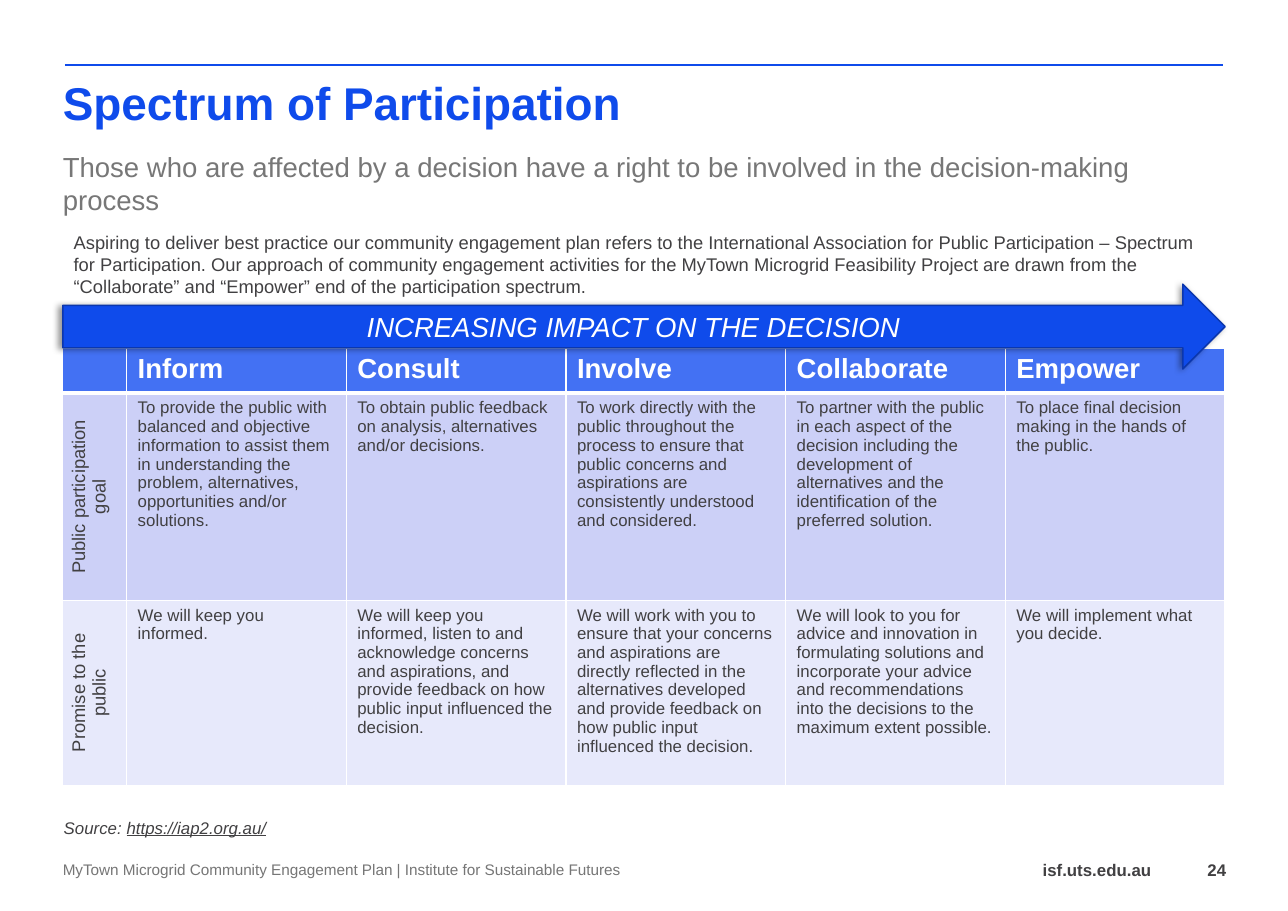
from dataclasses import dataclass

from lxml import etree
from pptx import Presentation
from pptx import util as u
from pptx.dml.color import RGBColor
from pptx.enum import shapes, text
from pptx.oxml import parse_xml
from pptx.oxml.ns import nsdecls, qn

LEFT, WIDTH = 0.57, 10.55
LABEL_WIDTH = 0.58
ROW_HEIGHTS = (0.41, 1.88, 1.68)
NO_INSET = (0, 0, 0, 0)
TEXT_INSET = (0.1, 0.05, 0.1, 0.05)

SPECTRUM = [
    ["", "Inform", "Consult", "Involve", "Collaborate", "Empower"],
    [
        "Public participation goal",
        "To provide the public with balanced and objective information to assist them in "
        "understanding the problem, alternatives, opportunities and/or solutions.",
        "To obtain public feedback on analysis, alternatives and/or decisions.",
        "To work directly with the public throughout the process to ensure that public "
        "concerns and aspirations are consistently understood and considered.",
        "To partner with the public in each aspect of the decision including the development "
        "of alternatives and the identification of the preferred solution.",
        "To place final decision making in the hands of the public.",
    ],
    [
        "Promise to the public",
        "We will keep you informed.",
        "We will keep you informed, listen to and acknowledge concerns and aspirations, and "
        "provide feedback on how public input influenced the decision.",
        "We will work with you to ensure that your concerns and aspirations are directly "
        "reflected in the alternatives developed and provide feedback on how public input "
        "influenced the decision.",
        "We will look to you for advice and innovation in formulating solutions and "
        "incorporate your advice and recommendations into the decisions to the maximum "
        "extent possible.",
        "We will implement what you decide.",
    ],
]


@dataclass(frozen=True)
class Theme:
    font: str = "Arial"
    blue: str = "0F4BEB"
    blue_edge: str = "0B37AE"
    ink: str = "414042"
    subtitle_grey: str = "777777"
    footer_grey: str = "767676"
    white: str = "FFFFFF"
    black: str = "000000"
    row_fills: tuple = ("4371F3", "CCD0F7", "E7E9FB")
    title: int = 30
    heading: int = 18
    intro: int = 12
    small: int = 11
    footer: int = 10


class SlideBuilder:
    def __init__(self, deck, theme):
        self.theme = theme
        self.page = deck.slides.add_slide(deck.slide_layouts[5])

    def add_text(self, frame, runs, size, color, align=text.PP_ALIGN.LEFT,
                 bold=False, italic=False):
        para = frame.paragraphs[0]
        para.alignment = align
        for words, underline in runs:
            span = para.add_run()
            span.text = words
            span.font.name = self.theme.font
            span.font.size = u.Pt(size)
            span.font.color.rgb = RGBColor.from_string(color)
            span.font.bold = bold
            span.font.italic = italic
            span.font.underline = underline
        return para

    def set_frame(self, frame, inset, anchor, wrap=True):
        frame.word_wrap = wrap
        frame.auto_size = text.MSO_AUTO_SIZE.NONE
        frame.vertical_anchor = anchor
        frame.margin_left, frame.margin_top, frame.margin_right, frame.margin_bottom = map(
            u.Inches, inset)

    def title(self, words, area):
        box = self.page.shapes.title
        box.left, box.top, box.width, box.height = map(u.Inches, area)
        self.set_frame(box.text_frame, NO_INSET, text.MSO_ANCHOR.TOP)
        para = self.add_text(box.text_frame, [(words, False)], self.theme.title,
                             self.theme.blue, bold=True)
        para.line_spacing = 0.9

    def textbox(self, runs, area, size, color, inset=TEXT_INSET,
                anchor=text.MSO_ANCHOR.TOP, wrap=True, **style):
        box = self.page.shapes.add_textbox(*map(u.Inches, area))
        self.set_frame(box.text_frame, inset, anchor, wrap)
        return self.add_text(box.text_frame, runs, size, color, **style)

    def rule(self, x1, x2, y):
        line = self.page.shapes.add_connector(
            shapes.MSO_CONNECTOR.STRAIGHT, *map(u.Inches, (x1, y, x2, y)))
        line.line.color.rgb = RGBColor.from_string(self.theme.blue)
        line.line.width = u.Pt(1.5)
        etree.SubElement(line._element.spPr, qn("a:effectLst"))

    def arrow(self, words, area):
        theme = self.theme
        arrow = self.page.shapes.add_shape(shapes.MSO_SHAPE.RIGHT_ARROW, *map(u.Inches, area))
        arrow.fill.solid()
        arrow.fill.fore_color.rgb = RGBColor.from_string(theme.blue)
        arrow.line.color.rgb = RGBColor.from_string(theme.blue_edge)
        arrow.line.width = u.Pt(1)
        arrow.shadow.inherit = False
        effects = arrow._element.spPr.find(qn("a:effectLst"))
        effects.append(parse_xml(
            f'<a:outerShdw {nsdecls("a")} blurRad="{u.Pt(4)}" dist="{u.Pt(3)}" '
            f'dir="10800000" rotWithShape="0"><a:srgbClr val="{theme.black}">'
            '<a:alpha val="40000"/></a:srgbClr></a:outerShdw>'))
        self.set_frame(arrow.text_frame, TEXT_INSET, text.MSO_ANCHOR.MIDDLE)
        self.add_text(arrow.text_frame, [(words, False)], theme.heading, theme.white,
                      text.PP_ALIGN.CENTER, italic=True)

    def borders(self, cell, top, bottom):
        props = cell._tc.get_or_add_tcPr()
        for side, width in (("L", 1), ("R", 1), ("T", top), ("B", bottom)):
            props.append(parse_xml(
                f'<a:ln{side} {nsdecls("a")} w="{u.Pt(width)}"><a:solidFill>'
                f'<a:srgbClr val="{self.theme.white}"/></a:solidFill></a:ln{side}>'))

    def table(self, rows, left, top, width, label_width, heights):
        theme = self.theme
        columns = len(rows[0])
        grid = self.page.shapes.add_table(
            len(rows), columns, *map(u.Inches, (left, top, width, sum(heights)))).table
        for index, column in enumerate(grid.columns):
            column.width = u.Inches(
                (width - label_width) / (columns - 1) if index else label_width)
        for r, words_in_row in enumerate(rows):
            grid.rows[r].height = u.Inches(heights[r])
            for c, words in enumerate(words_in_row):
                cell = grid.cell(r, c)
                self.borders(cell, top=3 if r == 1 else 1, bottom=1 if r else 3)
                cell.fill.solid()
                cell.fill.fore_color.rgb = RGBColor.from_string(theme.row_fills[r])
                if not words:
                    continue
                runs = [(words, False)]
                if r == 0:
                    self.add_text(cell.text_frame, runs, theme.heading, theme.white, bold=True)
                elif c == 0:
                    cell._tc.tcPr.set("vert", "vert270")
                    self.add_text(cell.text_frame, runs, theme.intro, theme.ink,
                                  text.PP_ALIGN.CENTER)
                else:
                    self.add_text(cell.text_frame, runs, theme.small, theme.ink)


def main():
    deck = Presentation()
    deck.slide_width, deck.slide_height = u.Inches(11.69), u.Inches(8.27)
    theme = Theme()
    slide = SlideBuilder(deck, theme)
    middle, right = text.MSO_ANCHOR.MIDDLE, text.PP_ALIGN.RIGHT

    slide.rule(0.59, 11.1, 0.59)
    slide.title("Spectrum of Participation", (LEFT, 0.73, WIDTH, 0.47))
    subtitle = slide.textbox(
        [("Those who are affected by a decision have a right to be involved in the "
          "decision-making process", False)],
        (LEFT, 1.36, WIDTH, 0.61), theme.heading, theme.subtitle_grey, NO_INSET)
    subtitle.space_after = u.Pt(18)
    slide.table(SPECTRUM, LEFT, 3.16, WIDTH, LABEL_WIDTH, ROW_HEIGHTS)
    slide.arrow("INCREASING IMPACT ON THE DECISION", (LEFT, 2.58, WIDTH, 0.77))
    slide.textbox(
        [("Aspiring to deliver best practice our community engagement plan refers to the "
          "International Association for Public Participation – Spectrum for Participation. "
          "Our approach of community engagement activities for the MyTown Microgrid "
          "Feasibility Project are drawn from the “Collaborate” and “Empower” end of the "
          "participation spectrum.", False)],
        (LEFT, 2.05, WIDTH, 0.71), theme.intro, theme.ink)
    slide.textbox([("Source: ", False), ("https://iap2.org.au/", True)],
                  (0.48, 7.37, 2.09, 0.29), theme.small, theme.ink, wrap=False, italic=True)
    slide.textbox(
        [("MyTown Microgrid Community Engagement Plan | Institute for Sustainable Futures",
          False)],
        (LEFT, 7.74, 5.3, 0.31), theme.footer, theme.footer_grey, NO_INSET, middle)
    slide.textbox([("isf.uts.edu.au", False)], (8.49, 7.74, 2.06, 0.31), theme.small,
                  theme.ink, anchor=middle, align=right, bold=True)
    slide.textbox([("24", False)], (10.66, 7.74, 0.47, 0.31), theme.small, theme.ink,
                  NO_INSET, middle, align=right, bold=True)
    deck.save("out.pptx")


if __name__ == "__main__":
    main()
